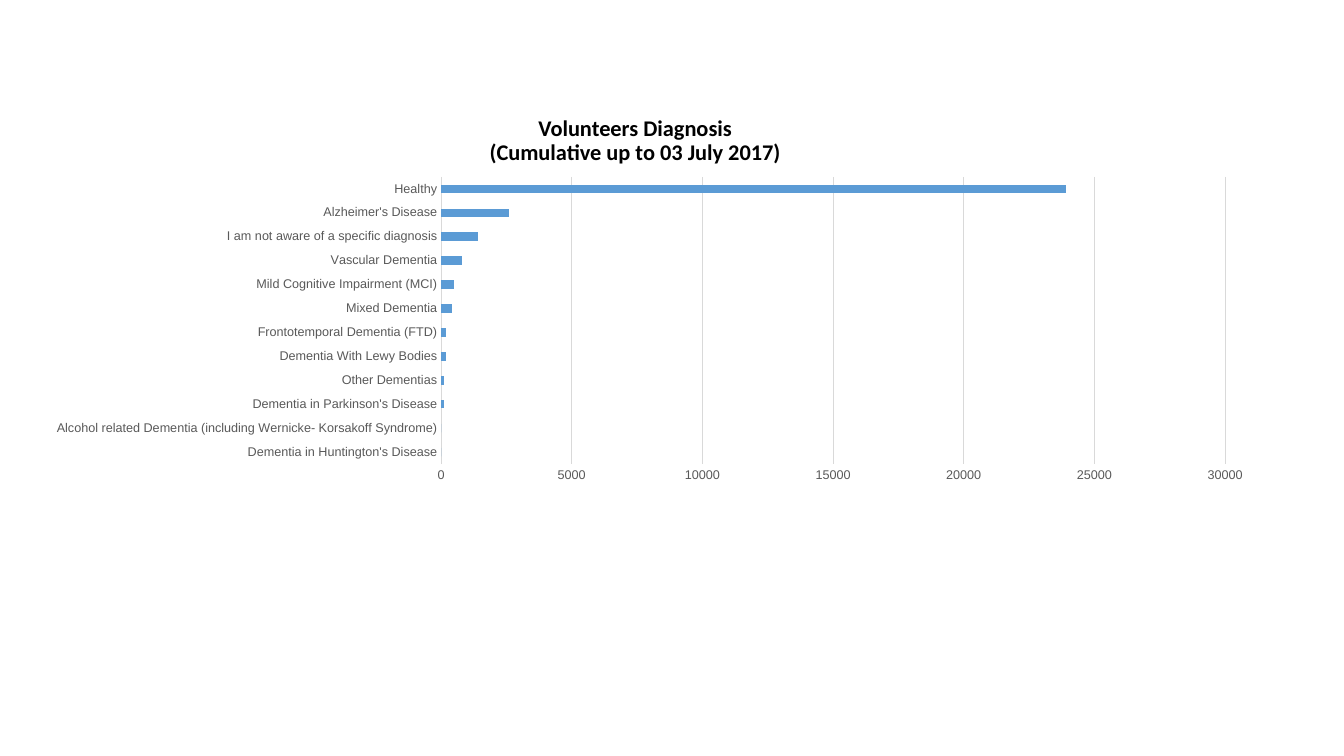
from typing import NamedTuple

from lxml.etree import SubElement
from pptx import Presentation
from pptx.chart.chart import Chart
from pptx.chart.data import CategoryChartData
from pptx.dml.color import RGBColor
from pptx.enum.chart import XL_CHART_TYPE, XL_TICK_MARK
from pptx.enum.text import MSO_ANCHOR, MSO_AUTO_SIZE, PP_ALIGN
from pptx.oxml.ns import qn
from pptx.slide import Slide
from pptx.text.text import Font
from pptx.util import Inches, Pt


class Diagnosis(NamedTuple):
    name: str
    volunteers: int


class PlotArea(NamedTuple):
    """Inner plot area as fractions of the chart."""
    x: float
    y: float
    w: float
    h: float


# Listed from the bottom bar to the top one
DIAGNOSES = [
    Diagnosis("Dementia in Huntington's Disease", 0),
    Diagnosis("Alcohol related Dementia (including Wernicke- Korsakoff Syndrome)", 0),
    Diagnosis("Dementia in Parkinson's Disease", 100),
    Diagnosis("Other Dementias", 100),
    Diagnosis("Dementia With Lewy Bodies", 200),
    Diagnosis("Frontotemporal Dementia (FTD)", 200),
    Diagnosis("Mixed Dementia", 400),
    Diagnosis("Mild Cognitive Impairment (MCI)", 500),
    Diagnosis("Vascular Dementia", 800),
    Diagnosis("I am not aware of a specific diagnosis", 1400),
    Diagnosis("Alzheimer's Disease", 2600),
    Diagnosis("Healthy", 23900),
]
PLOT_AREA = PlotArea(0.37, 0.24, 0.6, 0.68)
BLACK, GREY, PALE, BLUE = "000000", "595959", "D9D9D9", "5B9BD5"


def rgb(color: str) -> RGBColor:
    return RGBColor.from_string(color)


def style_font(font: Font, name: str, size: float, color: str, bold: bool = False) -> None:
    font.name = name
    font.size = Pt(size)
    font.bold = bold
    font.color.rgb = rgb(color)


def place_plot(chart: Chart, area: PlotArea) -> None:
    plot_area = chart.plots[0]._element.getparent()
    layout = plot_area.find(qn("c:layout"))
    if layout is None:
        layout = SubElement(plot_area, qn("c:layout"))
        plot_area.insert(0, layout)
    manual = SubElement(layout, qn("c:manualLayout"))
    settings = {"layoutTarget": "inner", "xMode": "edge", "yMode": "edge", **area._asdict()}
    for tag, value in settings.items():
        SubElement(manual, qn(f"c:{tag}")).set("val", str(value))


def add_heading(slide: Slide) -> None:
    heading = slide.shapes.title
    heading.left, heading.top = Inches(0.92), Inches(0.95)
    heading.width, heading.height = Inches(11.5), Inches(0.9)
    frame = heading.text_frame
    frame.text = "Volunteers Diagnosis\v(Cumulative up to 03 July 2017)"
    frame.word_wrap = True
    frame.auto_size = MSO_AUTO_SIZE.NONE
    frame.vertical_anchor = MSO_ANCHOR.MIDDLE
    frame.margin_left = frame.margin_top = frame.margin_bottom = Inches(0.1)
    frame.margin_right = Inches(0.84)
    lines = frame.paragraphs[0]
    lines.alignment = PP_ALIGN.CENTER
    lines.line_spacing = 0.9
    style_font(lines.font, "Calibri", 16, BLACK, bold=True)


def add_diagnosis_chart(slide: Slide) -> None:
    counts = CategoryChartData()
    counts.categories = [diagnosis.name for diagnosis in DIAGNOSES]
    counts.add_series("Volunteers", [diagnosis.volunteers for diagnosis in DIAGNOSES])
    chart = slide.shapes.add_chart(
        XL_CHART_TYPE.BAR_CLUSTERED,
        Inches(-0.42), Inches(0.75), Inches(12.96), Inches(4.19), counts,
    ).chart
    chart.has_title = False
    chart.has_legend = False
    style_font(chart.font, "Arial", 10, BLACK)
    place_plot(chart, PLOT_AREA)

    # Bars
    bars = chart.plots[0]
    bars.gap_width = 182
    bars.vary_by_categories = False
    fill = bars.series[0].format.fill
    fill.solid()
    fill.fore_color.rgb = rgb(BLUE)

    # Axes
    names, numbers = chart.category_axis, chart.value_axis
    for axis in (names, numbers):
        axis.major_tick_mark = axis.minor_tick_mark = XL_TICK_MARK.NONE
        style_font(axis.tick_labels.font, "Arial", 9, GREY)
    numbers.minimum_scale, numbers.maximum_scale = 0, 30000
    numbers.major_unit = 5000
    numbers.has_major_gridlines = True
    numbers.format.line.fill.background()
    for line in (names.format.line, numbers.major_gridlines.format.line):
        line.color.rgb = rgb(PALE)
        line.width = Pt(0.75)


def main() -> None:
    deck = Presentation()
    deck.slide_width, deck.slide_height = Inches(13.33), Inches(7.5)
    slide = deck.slides.add_slide(deck.slide_layouts[5])
    add_heading(slide)
    add_diagnosis_chart(slide)
    deck.save("out.pptx")


if __name__ == "__main__":
    main()
